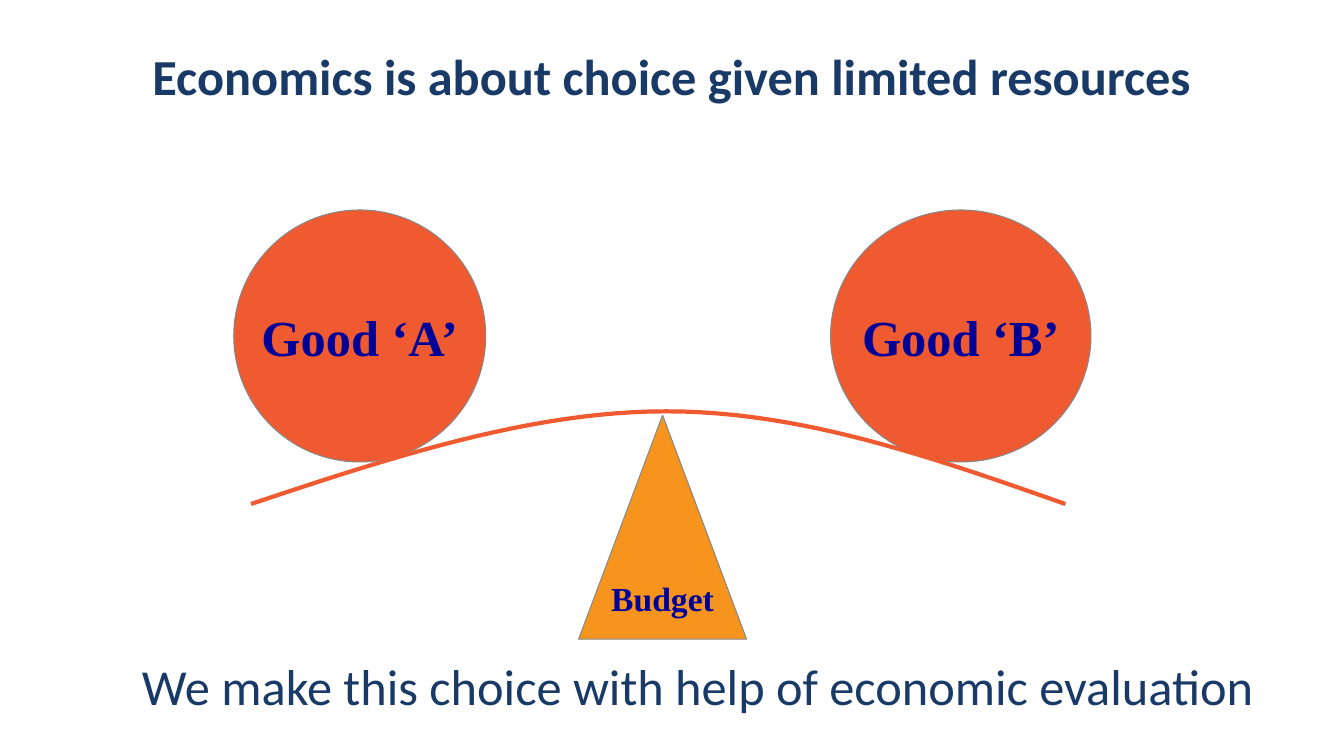
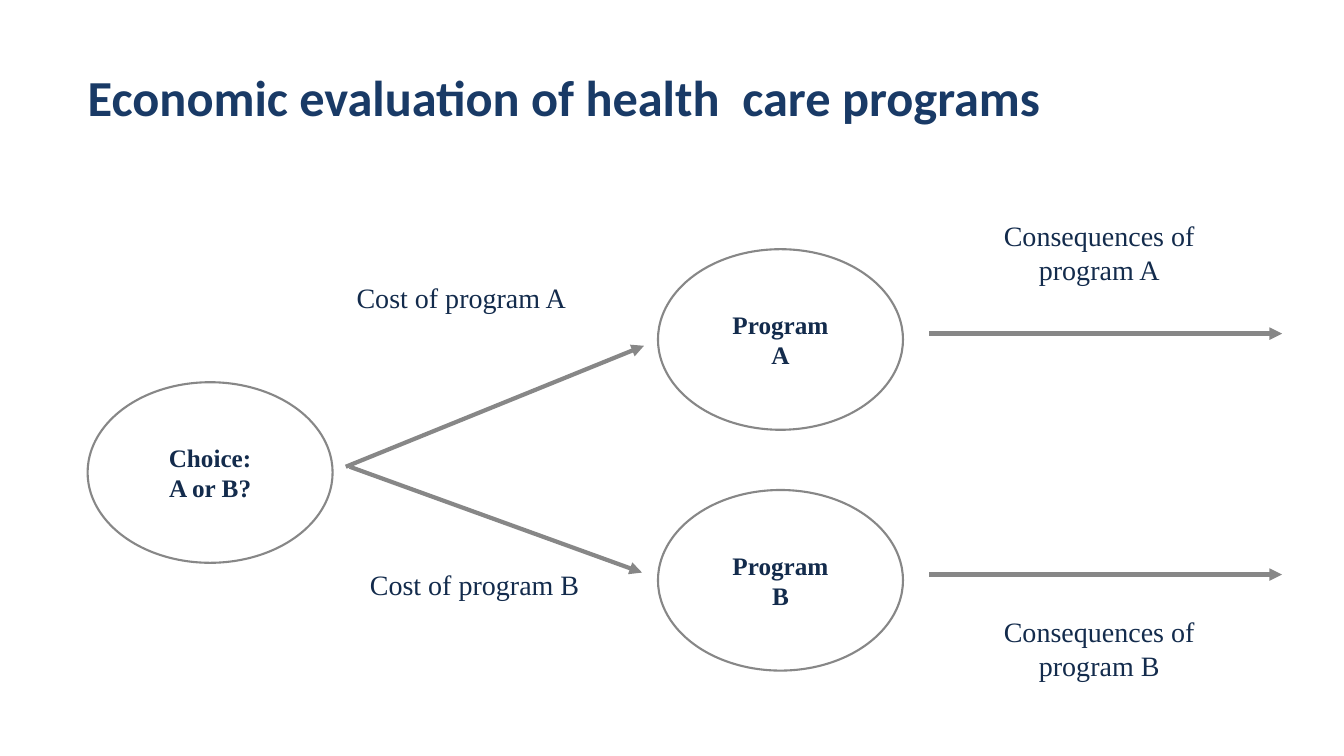
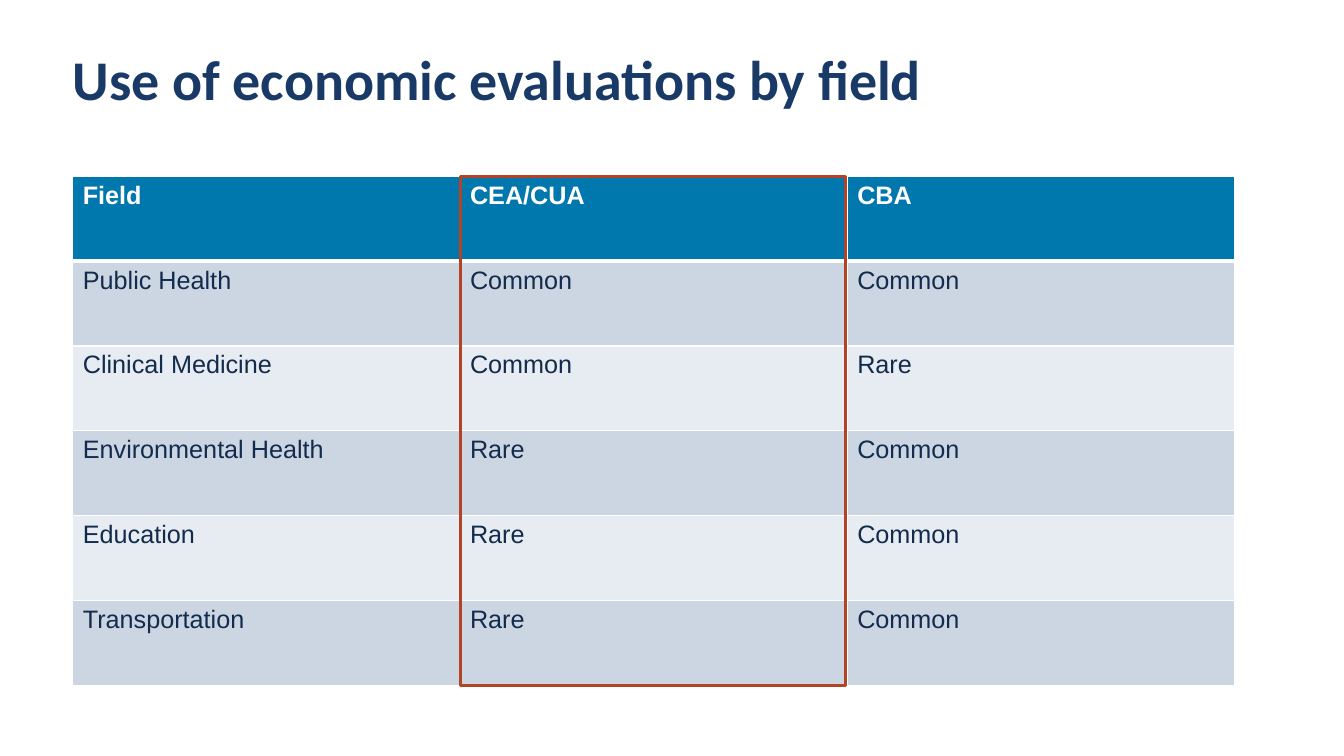
"""Build three slides on economic evaluation: choice, programs and fields of use."""
from dataclasses import dataclass

from lxml.etree import SubElement as Sub
from pptx import Presentation
from pptx.dml.color import RGBColor as RGB
from pptx.enum.shapes import MSO_CONNECTOR as Link, MSO_SHAPE as Form
from pptx.enum.text import MSO_ANCHOR as Anchor, PP_ALIGN as Align
from pptx.oxml.ns import qn
from pptx.util import Pt


@dataclass(frozen=True)
class Theme:
    """Colours, line widths and type styles."""
    navy = RGB.from_string("193A66")
    ink = RGB.from_string("132B4C")
    blue = RGB.from_string("000099")
    red = RGB.from_string("F05A30")
    gold = RGB.from_string("F7941D")
    gray = RGB.from_string("878787")
    rust = RGB.from_string("B24324")
    white = RGB.from_string("FFFFFF")
    head = RGB.from_string("0078AE")
    bands = RGB.from_string("E7ECF2"), RGB.from_string("CCD6E3")
    thin, edge, frame, bold = 0.75, 1.5, 2.25, 3
    title = navy, dict(name="Calibri", size=Pt(36), bold=True)
    large = navy, dict(name="Calibri", size=Pt(40), bold=True)
    plain = navy, dict(name="Calibri", size=Pt(36), bold=False)
    good = blue, dict(name="Times New Roman", size=Pt(36), bold=True)
    fund = blue, dict(name="Times New Roman", size=Pt(24), bold=True)
    node = ink, dict(name="Times New Roman", size=Pt(18), bold=True)
    label = ink, dict(name="Times New Roman", size=Pt(20), bold=False)
    top = white, dict(name="Arial", size=Pt(18), bold=True)
    body = ink, dict(name="Arial", size=Pt(18), bold=False)


T = Theme()
FLAT = dict(margin_left=0, margin_top=0, margin_right=0, margin_bottom=0,
            word_wrap=True, vertical_anchor=Anchor.TOP)
MID = dict(word_wrap=False, vertical_anchor=Anchor.MIDDLE)
FREE = dict(word_wrap=False)


def write(frame, text, style, side=Align.CENTER, pitch=None, **form):
    """Fill a text frame, one paragraph to each line of text."""
    for key, val in form.items():
        setattr(frame, key, val)
    color, font = style
    for num, line in enumerate(text.split("\n")):
        para = frame.add_paragraph() if num else frame.paragraphs[0]
        para.alignment, para.line_spacing = side, pitch
        run = para.add_run()
        run.text = line
        run.font.color.rgb = color
        for key, val in font.items():
            setattr(run.font, key, val)


def draw(slide, form, box, fill, line, width):
    """Add a preset shape with the given fill and outline."""
    shape = slide.shapes.add_shape(form, *map(Pt, box))
    shape.shadow.inherit = False
    if fill is None:
        shape.fill.background()
    else:
        shape.fill.solid()
        shape.fill.fore_color.rgb = fill
    shape.line.color.rgb, shape.line.width = line, Pt(width)
    return shape


deck = Presentation()
deck.slide_width, deck.slide_height = Pt(960), Pt(540)
scale, tree, grid = [deck.slides.add_slide(deck.slide_layouts[6]) for _ in range(3)]

for slide, box, text, style, side in (
    (scale, (52, 37, 856, 55), "Economics is about choice given limited resources",
     T.title, Align.CENTER),
    (tree, (62.6, 52, 866, 64), "Economic evaluation of health  care programs",
     T.title, Align.LEFT),
    (grid, (52, 37, 856, 55), "Use of economic evaluations by field",
     T.large, Align.LEFT),
    (scale, (70.6, 473, 856, 55), "We make this choice with help of economic evaluation",
     T.plain, Align.CENTER),
):
    area = slide.shapes.add_textbox(*map(Pt, box))
    write(area.text_frame, text, style, side, 0.9, **FLAT)

wedge = draw(scale, Form.ISOSCELES_TRIANGLE, (413.3, 296.6, 120, 160), T.gold, T.gray, T.thin)
write(wedge.text_frame, "Budget", T.fund, margin_top=Pt(25), **MID)
for left, wide, text in (167, 180, "Good ‘A’"), (593.3, 186, "Good ‘B’"):
    ball = draw(scale, Form.OVAL, (left, 150, wide, 180), T.red, T.gray, T.thin)
    write(ball.text_frame, text, T.good, **MID)

low, high, steps = 360, 293.8, 24
halves = (179.3, 278.6, 378.7, 475.9), (475.9, 573.1, 666.7, 761)
rises = (low, (low + high) / 2, high, high), (high, high, (low + high) / 2, low)
dots = []
for axes in zip(halves, rises):
    for step in range(steps + 1):
        t = step / steps
        mix = (1 - t) ** 3, 3 * t * (1 - t) ** 2, 3 * t * t * (1 - t), t ** 3
        dots.append([Pt(sum(m * v for m, v in zip(mix, axis))) for axis in axes])
pen = scale.shapes.build_freeform(*dots[0])
pen.add_line_segments(dots[1:], close=False)
beam = pen.convert_to_shape()
beam.shadow.inherit = False
beam.fill.background()
beam.line.color.rgb, beam.line.width = T.red, Pt(T.bold)

for ends in ((247, 333.4, 460, 247), (249.8, 333.4, 458.6, 409),
             (663.8, 238.3, 915.8, 238.3), (663.8, 410.4, 915.8, 410.4)):
    arrow = tree.shapes.add_connector(Link.STRAIGHT, *map(Pt, ends))
    arrow.line.color.rgb, arrow.line.width = T.gray, Pt(T.bold)
    Sub(arrow.line._get_or_add_ln(), qn("a:tailEnd"), type="triangle")
    Sub(arrow._element.spPr, qn("a:effectLst"))

for left, top, text in ((62.6, 273, "Choice:\nA or B?"),
                        (470, 178, "Program\nA"), (470, 350, "Program\nB")):
    oval = draw(tree, Form.OVAL, (left, top, 175, 129), T.white, T.gray, T.edge)
    write(oval.text_frame, text, T.node, **MID)

for left, top, wide, tall, text in (
    (227.5, 196.6, 204, 32, "Cost of program A"),
    (237, 401.8, 204, 32, "Cost of program B"),
    (709.2, 152.6, 152, 55.4, "Consequences of\nprogram A"),
    (709.2, 435.6, 152, 55.4, "Consequences of\nprogram B"),
):
    area = tree.shapes.add_textbox(*map(Pt, (left, top, wide, tall)))
    write(area.text_frame, text, T.label, **FREE)

rows = (
    ("Field", "CEA/CUA", "CBA"),
    ("Public Health", "Common", "Common"),
    ("Clinical Medicine", "Common", "Rare"),
    ("Environmental Health", "Rare", "Common"),
    ("Education", "Rare", "Common"),
    ("Transportation", "Rare", "Common"),
)
wide, tall = 276.6, 60.6
size = 52, 126, wide * 3, tall * len(rows)
table = grid.shapes.add_table(len(rows), 3, *map(Pt, size)).table
for col in table.columns:
    col.width = Pt(wide)
for y, row in enumerate(rows):
    table.rows[y].height = Pt(tall)
    for x, text in enumerate(row):
        cell = table.cell(y, x)
        props = cell._tc.get_or_add_tcPr()
        for side in "LRTB":
            thick = (side, y) in (("B", 0), ("T", 1))
            rule = Sub(props, qn(f"a:ln{side}"), w=str(Pt(T.bold if thick else 1)))
            Sub(Sub(rule, qn("a:solidFill")), qn("a:srgbClr"), val=str(T.white))
        cell.fill.solid()
        cell.fill.fore_color.rgb = T.bands[y % 2] if y else T.head
        write(cell.text_frame, text, T.body if y else T.top, Align.LEFT)
draw(grid, Form.RECTANGLE, (329, 126, 275, tall * len(rows)), None, T.rust, T.frame)

deck.save("out.pptx")
